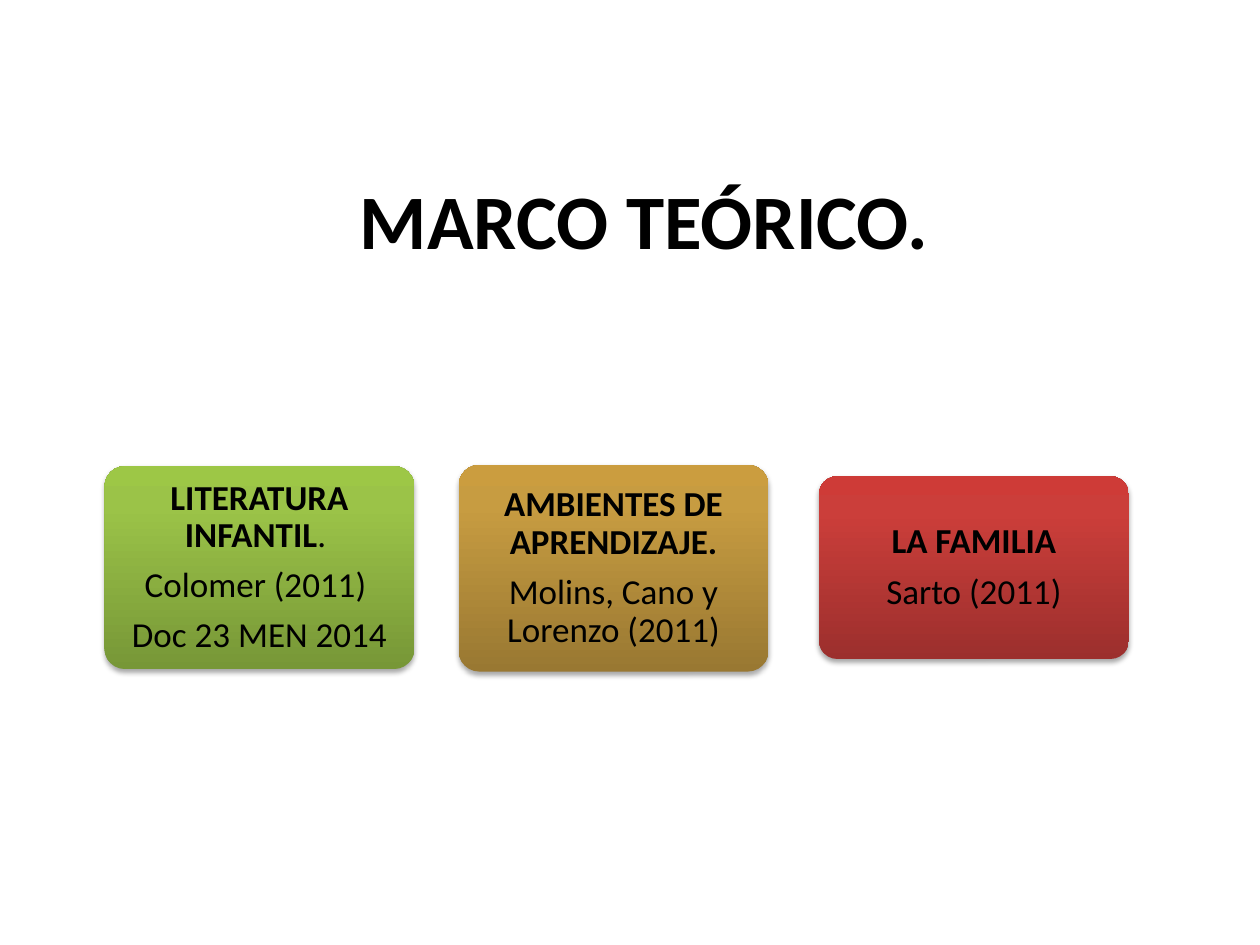
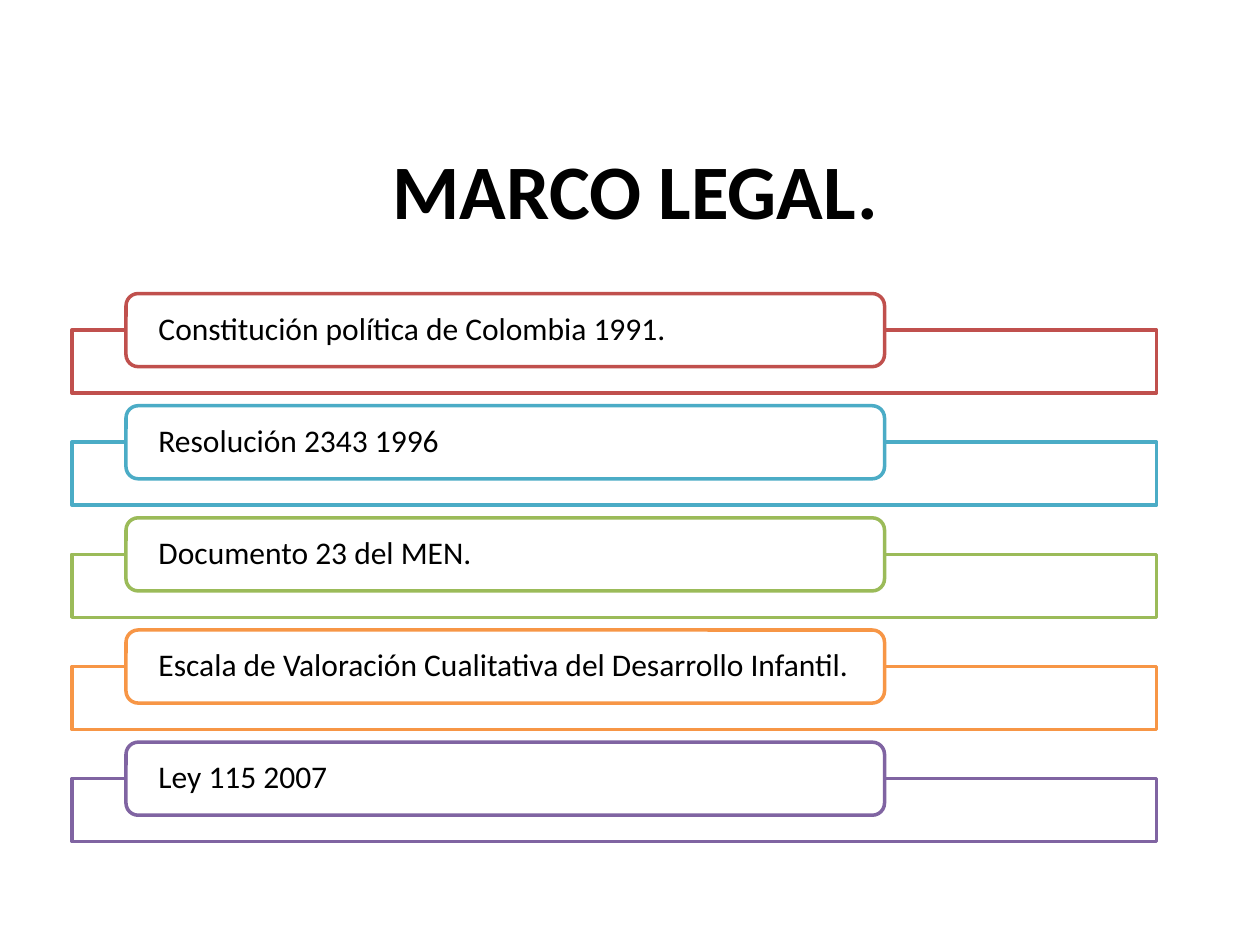
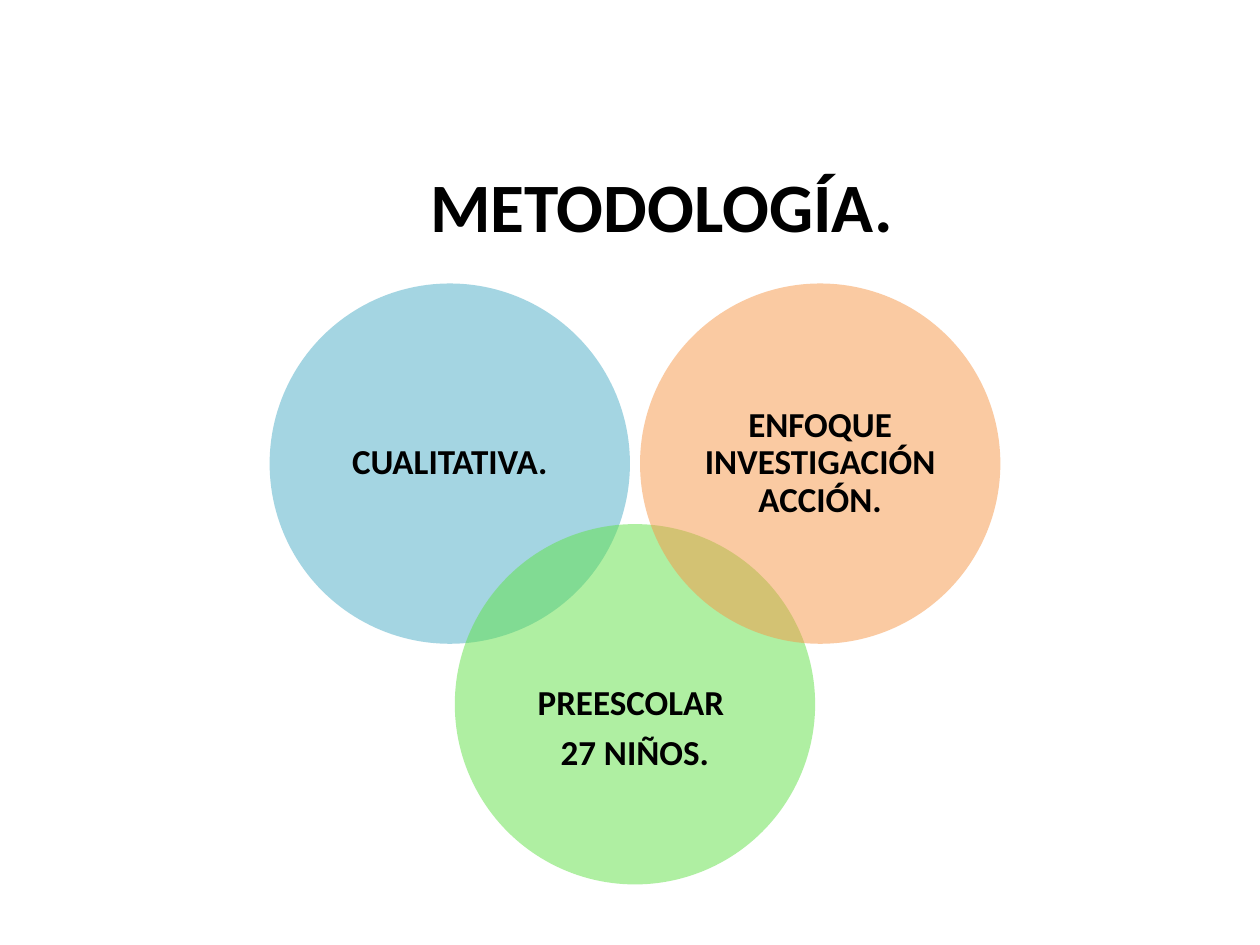
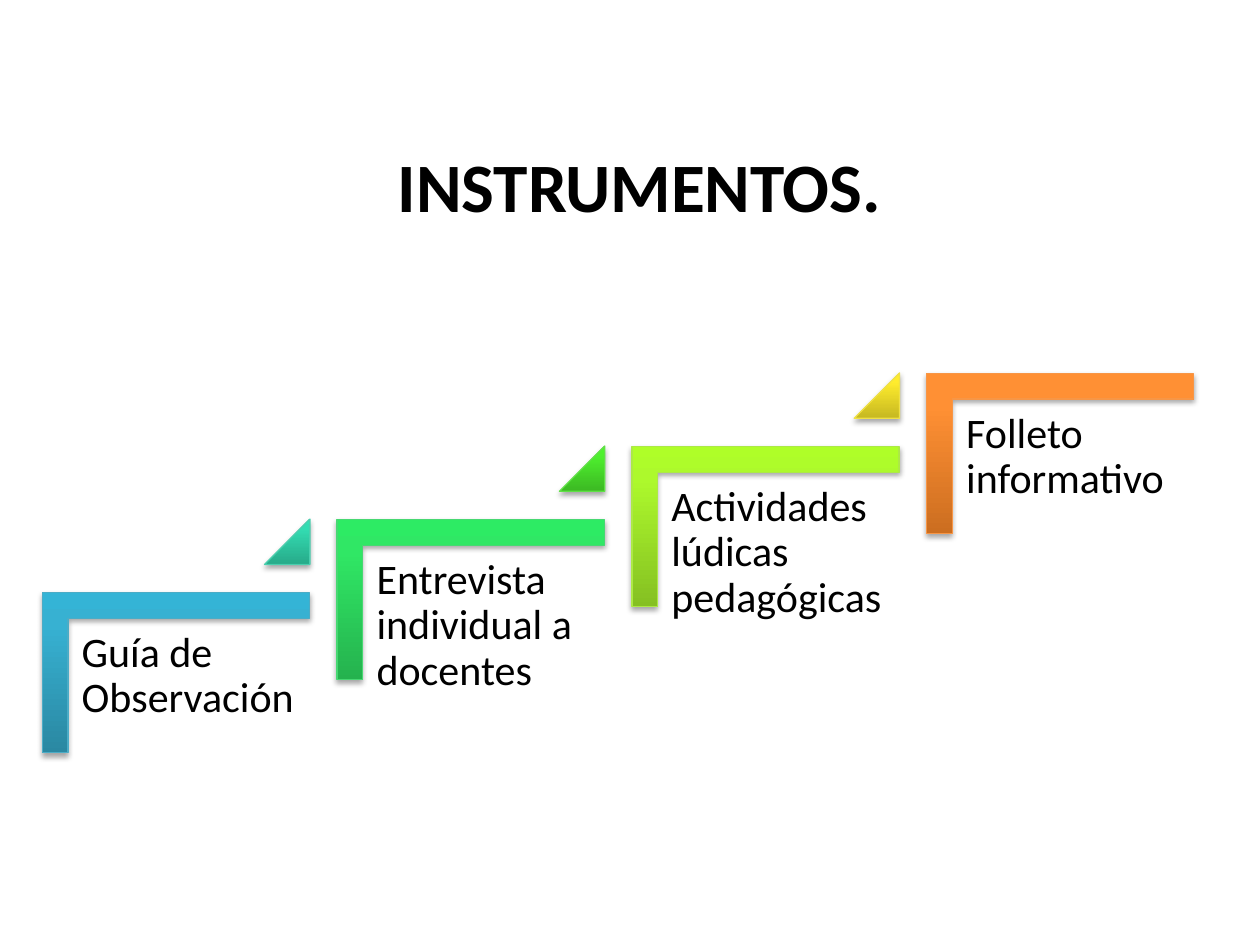
from dataclasses import dataclass

from lxml import etree
from pptx import Presentation
from pptx.dml.color import RGBColor
from pptx.enum.shapes import MSO_SHAPE
from pptx.enum.text import MSO_ANCHOR, PP_ALIGN
from pptx.oxml.ns import qn
from pptx.shapes.autoshape import Shape
from pptx.slide import Slide
from pptx.text.text import TextFrame
from pptx.util import Inches, Pt

RECT, ROUND_RECT, OVAL = MSO_SHAPE.RECTANGLE, MSO_SHAPE.ROUNDED_RECTANGLE, MSO_SHAPE.OVAL
CORNER, TRIANGLE = MSO_SHAPE.CORNER, MSO_SHAPE.ISOSCELES_TRIANGLE
LEFT, CENTER = PP_ALIGN.LEFT, PP_ALIGN.CENTER
TOP, MIDDLE = MSO_ANCHOR.TOP, MSO_ANCHOR.MIDDLE

Box = tuple[float, float, float, float]
Gradient = tuple[str, str, str]


@dataclass(frozen=True)
class Theme:
    font: str = "Calibri"
    text: str = "000000"
    paper: str = "FFFFFF"
    red: str = "C0504D"
    aqua: str = "4BACC6"
    olive: str = "9BBB59"
    orange: str = "F79646"
    purple: str = "8064A2"
    green: str = "60E146"
    title: float = 44
    title_small: float = 39.6
    body: float = 20
    law: float = 18
    step: float = 24
    gradient_stops: tuple[int, ...] = (0, 80, 100)


THEME = Theme()


@dataclass(frozen=True)
class Run:
    text: str
    bold: bool = False


@dataclass(frozen=True)
class Card:
    box: Box
    colors: Gradient
    paragraphs: list[list[Run]]


@dataclass(frozen=True)
class Law:
    text: str
    color: str


@dataclass(frozen=True)
class Circle:
    left: float
    top: float
    color: str
    lines: list[str]
    drop: float = 0


@dataclass(frozen=True)
class Accent:
    colors: Gradient
    line: str


@dataclass(frozen=True)
class Step:
    text: str
    corner: Accent
    triangle: Accent | None = None


CARDS = [
    Card((6.5, 3.78, 2.46, 1.45), ("9C2F2D", "CB3E3A", "CE3B37"),
         [[Run("LA FAMILIA", True)], [Run("Sarto (2011)")]]),
    Card((3.64, 3.69, 2.46, 1.64), ("997832", "C79C41", "CB9D3F"),
         [[Run("AMBIENTES DE APRENDIZAJE.", True)], [Run("Molins, Cano y Lorenzo (2011)")]]),
    Card((0.83, 3.7, 2.46, 1.61), ("779737", "9BC348", "9DC746"),
         [[Run("LITERATURA INFANTIL", True), Run(". ")],
          [Run("Colomer (2011) ")], [Run("Doc 23 MEN 2014")]]),
]

LAWS = [
    Law("Constitución política de Colombia 1991.", THEME.red),
    Law("Resolución 2343 1996", THEME.aqua),
    Law("Documento 23 del MEN.", THEME.olive),
    Law("Escala de Valoración Cualitativa del Desarrollo Infantil.", THEME.orange),
    Law("Ley 115 2007", THEME.purple),
]

CIRCLES = [
    Circle(2.14, 2.25, THEME.aqua, ["CUALITATIVA."]),
    Circle(3.61, 4.16, THEME.green, ["PREESCOLAR ", "27 NIÑOS."], drop=0.4),
    Circle(5.08, 2.25, THEME.orange, ["ENFOQUE INVESTIGACIÓN ACCIÓN."]),
]

STEPS = [
    Step("Guía de Observación",
         Accent(("2A88A2", "37B1D2", "34B4D6"), THEME.aqua),
         Accent(("27AA89", "33DCB2", "30E1B5"), "49CFAE")),
    Step("Entrevista individual a docentes",
         Accent(("25B24E", "30E765", "2DEB64"), "47D872"),
         Accent(("3CB923", "4EF02E", "4CF52A"), THEME.green)),
    Step("Actividades lúdicas pedagógicas",
         Accent(("85C022", "ADF92C", "AFFE28"), "ACE946"),
         Accent(("C6B821", "FFEC2D", "FFED2E"), "F0E146")),
    Step("Folleto informativo",
         Accent(("CC6E20", "FF9034", "FF9136"), THEME.orange)),
]


def write(tf: TextFrame, paragraphs: list[list[Run]], *, size: float, align: PP_ALIGN = LEFT,
          anchor: MSO_ANCHOR = MIDDLE, inset: Box = (0.1, 0.05, 0.1, 0.05),
          line_spacing: float = 0.9, after: float = 0.35) -> None:
    """Fill a text frame; after is the space below a paragraph as a share of the type size."""
    tf.word_wrap = True
    tf.vertical_anchor = anchor
    tf.margin_left, tf.margin_top, tf.margin_right, tf.margin_bottom = map(Inches, inset)
    for i, runs in enumerate(paragraphs):
        p = tf.paragraphs[0] if i == 0 else tf.add_paragraph()
        p.alignment = align
        p.line_spacing = line_spacing
        p.space_after = Pt(size * after)
        for run in runs:
            r = p.add_run()
            r.text = run.text
            r.font.name = THEME.font
            r.font.size = Pt(size)
            r.font.bold = run.bold
            r.font.color.rgb = RGBColor.from_string(THEME.text)


def add_text_frame(slide: Slide, box: Box) -> TextFrame:
    return slide.shapes.add_textbox(*map(Inches, box)).text_frame


def add_title(slide: Slide, text: str, box: Box, size: float) -> None:
    write(add_text_frame(slide, box), [[Run(text, True)]], size=size, align=CENTER,
          line_spacing=1, after=0)


def add_shape(slide: Slide, kind: MSO_SHAPE, box: Box, *, line: str | None = None,
              width: float = 0.75, adjust: tuple[float, ...] = ()) -> Shape:
    sp = slide.shapes.add_shape(kind, *map(Inches, box))
    sp.shadow.inherit = False
    for i, value in enumerate(adjust):
        sp.adjustments[i] = value
    if line:
        sp.line.color.rgb = RGBColor.from_string(line)
        sp.line.width = Pt(width)
    else:
        sp.line.fill.background()
    return sp


def add_color(parent: etree._Element, color: str, alpha: int = 100) -> None:
    clr = etree.SubElement(parent, qn("a:srgbClr"), val=color)
    if alpha < 100:
        etree.SubElement(clr, qn("a:alpha"), val=str(alpha * 1000))


def fill_solid(sp: Shape, color: str, alpha: int = 100) -> None:
    sp.fill.solid()
    sp.fill.fore_color.rgb = RGBColor.from_string(color)
    if alpha < 100:
        fill = sp.element.spPr.find(qn("a:solidFill"))
        fill.remove(fill[0])
        add_color(fill, color, alpha)


def fill_raised(sp: Shape, colors: Gradient) -> None:
    """Give a shape a gradient rising from the bottom, and a soft shadow below."""
    sp.fill.gradient()
    grad = sp.element.spPr.find(qn("a:gradFill"))
    for child in list(grad):
        grad.remove(child)
    grad.set("rotWithShape", "0")
    stops = etree.SubElement(grad, qn("a:gsLst"))
    for pos, color in zip(THEME.gradient_stops, colors):
        add_color(etree.SubElement(stops, qn("a:gs"), pos=str(pos * 1000)), color)
    etree.SubElement(grad, qn("a:lin"), ang="16200000", scaled="0")
    effects = sp.element.spPr.find(qn("a:effectLst"))
    shadow = etree.SubElement(effects, qn("a:outerShdw"), blurRad=str(int(Pt(3.1))),
                              dist=str(int(Pt(1.8))), dir="5400000", rotWithShape="0")
    add_color(shadow, THEME.text, 35)


def build_theory(slide: Slide) -> None:
    add_title(slide, "MARCO TEÓRICO.", (1.61, 1.31, 7.01, 0.86), THEME.title)
    for card in CARDS:
        sp = add_shape(slide, ROUND_RECT, card.box, adjust=(0.1,))
        fill_raised(sp, card.colors)
        write(sp.text_frame, card.paragraphs, size=THEME.body, align=CENTER,
              inset=(0.04, 0.03, 0.04, 0.03))


def build_legal(slide: Slide) -> None:
    add_title(slide, "MARCO LEGAL. ", (2.4, 0.99, 5.43, 1.01), THEME.title)
    top, pitch = 2.33, 0.89
    for i, law in enumerate(LAWS):
        y = top + i * pitch
        frame = add_shape(slide, RECT, (0.57, y + 0.29, 8.61, 0.5), line=law.color, width=2)
        label = add_shape(slide, ROUND_RECT, (1, y, 6.02, 0.58), line=law.color, width=2)
        for sp in (frame, label):
            fill_solid(sp, THEME.paper)
        write(label.text_frame, [[Run(law.text)]], size=THEME.law, inset=(0.23, 0, 0.23, 0))


def build_method(slide: Slide) -> None:
    add_title(slide, "METODOLOGÍA.", (2.87, 1.23, 4.76, 0.79), THEME.title_small)
    diameter, pad = 2.86, 0.08
    for circle in CIRCLES:
        sp = add_shape(slide, OVAL, (circle.left, circle.top, diameter, diameter))
        fill_solid(sp, circle.color, alpha=50)
        write(sp.text_frame, [[Run(line, True)] for line in circle.lines], size=THEME.body,
              align=CENTER, inset=(pad, pad + circle.drop, pad, pad))


def build_instruments(slide: Slide) -> None:
    add_title(slide, "INSTRUMENTOS.", (2.95, 0.92, 4.25, 1.09), THEME.title_small)
    left, top, run, rise = 0.76, 4.28, 2.34, 0.58
    for i, step in enumerate(STEPS):
        x, y = left + i * run, top - i * rise
        corner = add_shape(slide, CORNER, (x, y, 1.27, 2.12), line=step.corner.line,
                           adjust=(0.16, 0.16))
        corner.rotation = 90
        fill_raised(corner, step.corner.colors)
        write(add_text_frame(slide, (x - 0.21, y + 0.63, 1.91, 1.68)), [[Run(step.text)]],
              size=THEME.step, anchor=TOP, inset=(0.1, 0.1, 0.1, 0.1))
        if step.triangle:
            triangle = add_shape(slide, TRIANGLE, (x + 1.34, y - 0.16, 0.36, 0.36),
                                 line=step.triangle.line, adjust=(1,))
            fill_raised(triangle, step.triangle.colors)


def main() -> None:
    prs = Presentation()
    prs.slide_width, prs.slide_height = Inches(10), Inches(7.5)
    blank = prs.slide_layouts[6]
    for build in (build_theory, build_legal, build_method, build_instruments):
        build(prs.slides.add_slide(blank))
    prs.save("out.pptx")


if __name__ == "__main__":
    main()
